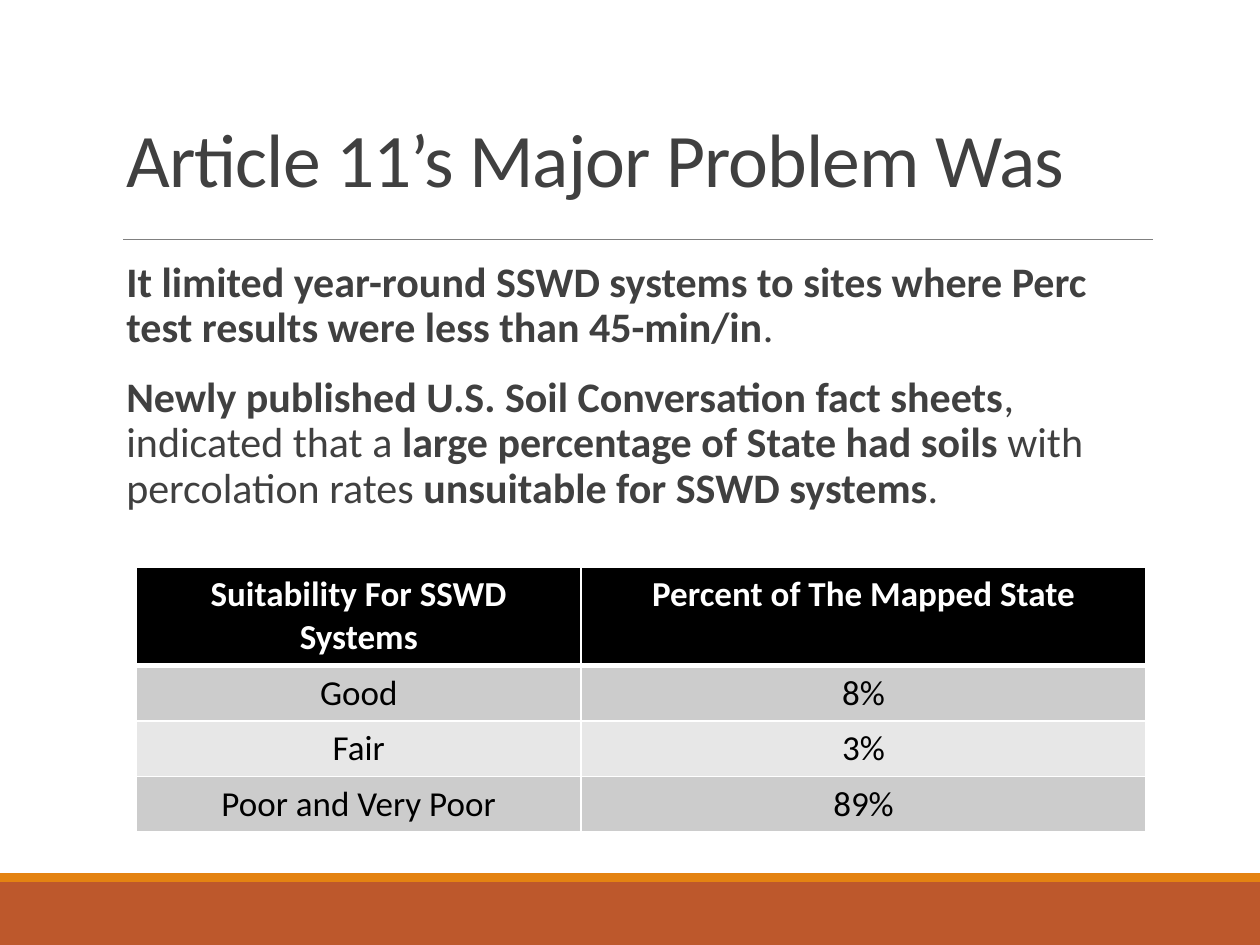
"""Build the slide on Article 11's major problem, with its soil table."""
from lxml import etree
from pptx import Presentation
from pptx.dml.color import RGBColor
from pptx.enum import shapes, text
from pptx.oxml import ns
from pptx.util import Pt


def tint(code):
    return RGBColor.from_string(code)


def write(para, words, size=24, color="404040", bold=False, align=text.PP_ALIGN.LEFT):
    para.alignment = align
    run = para.add_run()
    run.text = words
    font = run.font
    font.name, font.size, font.bold = "Calibri", Pt(size), bold
    font.color.rgb = tint(color)
    return run


deck = Presentation()
deck.slide_width, deck.slide_height = Pt(720), Pt(540)
slide = deck.slides.add_slide(deck.slide_layouts[1])
items = slide.shapes

for top, high, color in [(504, 36, "BD582C"), (499, 5, "E48312")]:
    band = items.add_shape(shapes.MSO_SHAPE.RECTANGLE, 0, Pt(top), Pt(720), Pt(high))
    band.shadow.inherit = False
    band.fill.solid()
    band.fill.fore_color.rgb = tint(color)
    band.line.fill.background()

rule = items.add_connector(shapes.MSO_CONNECTOR.STRAIGHT, Pt(70.5), Pt(137), Pt(659), Pt(137))
rule.line.color.rgb = tint("808080")
rule.line.width = Pt(0.5)
etree.SubElement(rule._element.spPr, ns.qn("a:effectLst"))

title, body = slide.placeholders
for box, top, high, anchor in [
    (title, 22.5, 97, text.MSO_ANCHOR.BOTTOM),
    (body, 145.5, 317, text.MSO_ANCHOR.TOP),
]:
    box.left, box.top, box.width, box.height = Pt(65), Pt(top), Pt(594), Pt(high)
    box.text_frame.auto_size = text.MSO_AUTO_SIZE.NONE
    box.text_frame.word_wrap = True
    box.text_frame.vertical_anchor = anchor

head = title.text_frame.paragraphs[0]
head.line_spacing = 0.85
run = write(head, "Article 11’s Major Problem Was", size=43.2)
run._r.get_or_add_rPr().set("spc", "-50")

frame = body.text_frame
frame.margin_left = frame.margin_right = 0
points = [
    [("It limited year-round SSWD systems to sites where Perc test results "
      "were less than 45-min/in", True), (".", False)],
    [("Newly published U.S. Soil Conversation fact sheets", True),
     (", indicated that a ", False),
     ("large percentage of State had soils ", True),
     ("with percolation rates ", False),
     ("unsuitable for SSWD systems", True), (".", False)],
]
for i, parts in enumerate(points):
    para = frame.add_paragraph() if i else frame.paragraphs[0]
    para.line_spacing, para.space_before, para.space_after = 0.9, Pt(12), Pt(2)
    for words, bold in parts:
        write(para, words, bold=bold)
    props = para._p.get_or_add_pPr()
    props.set("marL", str(Pt(7.2)))
    props.set("indent", str(-Pt(7.2)))
    etree.SubElement(props, ns.qn("a:buChar"), char=" ")

rows = [
    ("Suitability For SSWD Systems", "Percent of The Mapped State"),
    ("Good", "8%"),
    ("Fair", "3%"),
    ("Poor and Very Poor", "89%"),
]
fills = ["000000", "CCCCCC", "E7E7E7", "CCCCCC"]
grid = items.add_table(4, 2, Pt(78), Pt(324), Pt(577), Pt(150)).table
for col, wide in zip(grid.columns, (254, 323)):
    col.width = Pt(wide)
for r, row in enumerate(rows):
    grid.rows[r].height = Pt(31.7 if r else 55.5)
    for c, words in enumerate(row):
        cell = grid.cell(r, c)
        cell.fill.solid()
        cell.fill.fore_color.rgb = tint(fills[r])
        write(cell.text_frame.paragraphs[0], words, size=20, bold=r == 0,
              color="000000" if r else "FFFFFF", align=text.PP_ALIGN.CENTER)
        props = cell._tc.get_or_add_tcPr()
        for n, side in enumerate("LRTB"):
            thick = 3 if (r, side) in [(0, "B"), (1, "T")] else 1
            edge = etree.Element(ns.qn("a:ln" + side), w=str(Pt(thick)))
            paint = etree.SubElement(edge, ns.qn("a:solidFill"))
            etree.SubElement(paint, ns.qn("a:srgbClr"), val="FFFFFF")
            props.insert(n, edge)

deck.save("out.pptx")
